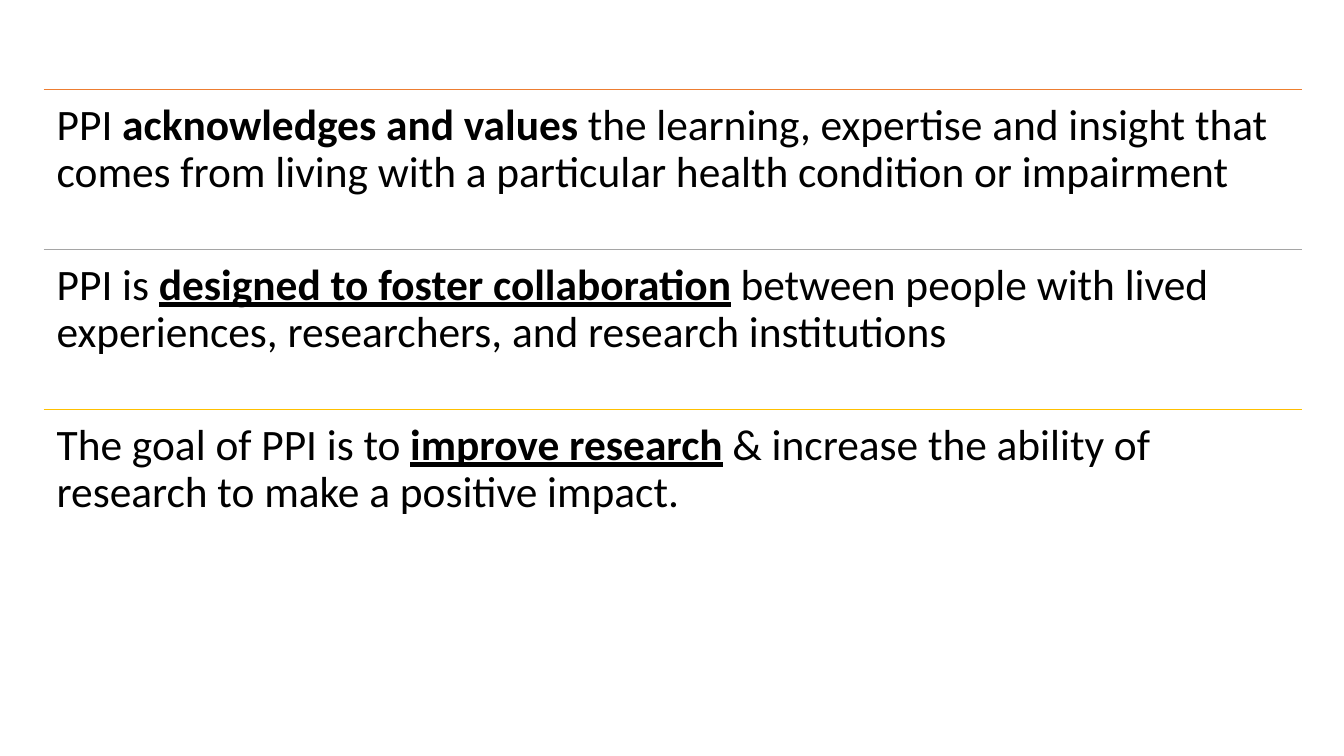
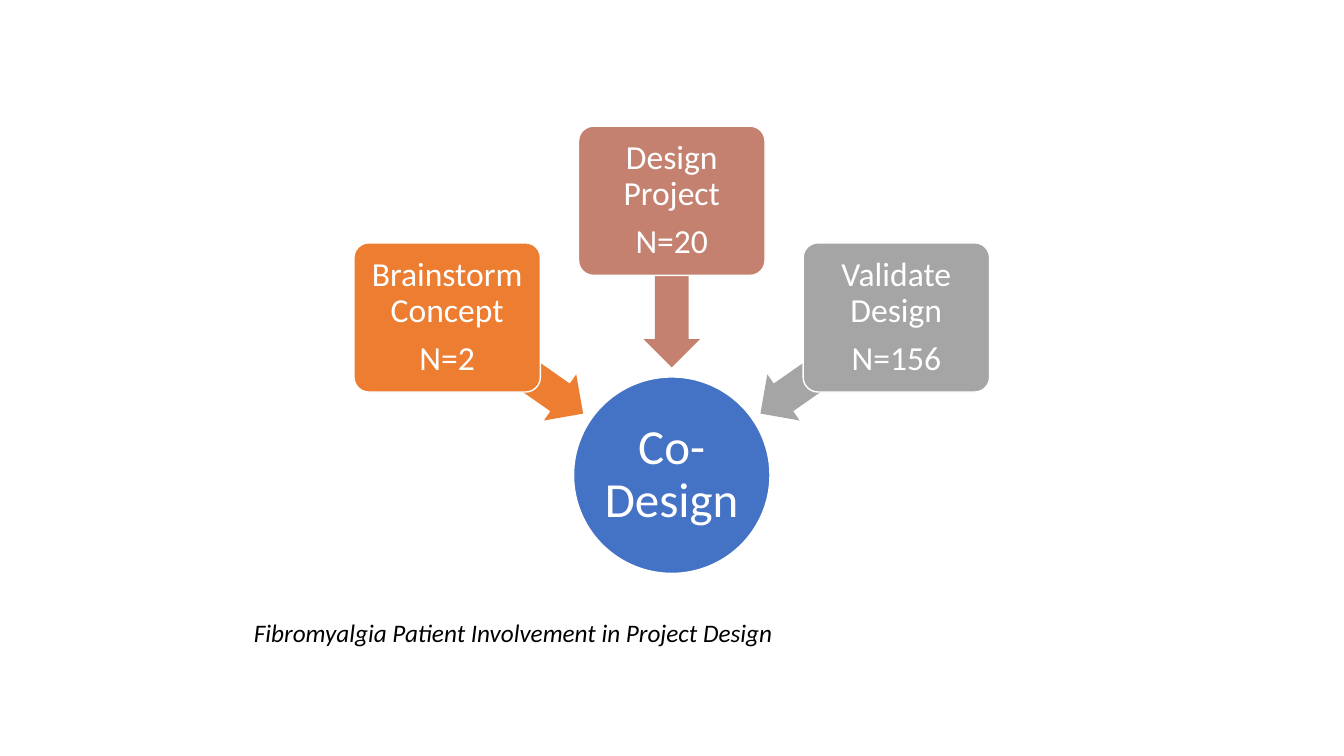
import pptx
import pptx.util
import pptx.dml.color
import pptx.enum.shapes
import pptx.enum.text
import lxml.etree

Cm = pptx.util.Cm
Pt = pptx.util.Pt
RGBColor = pptx.dml.color.RGBColor
Shape = pptx.enum.shapes.MSO_SHAPE
Align = pptx.enum.text.PP_ALIGN
Anchor = pptx.enum.text.MSO_ANCHOR

BLACK = RGBColor(0x00, 0x00, 0x00)
WHITE = RGBColor(0xFF, 0xFF, 0xFF)
BLUE = RGBColor(0x44, 0x72, 0xC4)
ORANGE = RGBColor(0xED, 0x7D, 0x31)
GREY = RGBColor(0xA5, 0xA5, 0xA5)
GOLD = RGBColor(0xFF, 0xC0, 0x00)
ROSE = RGBColor(0xC4, 0x81, 0x70)
FONT = "Calibri"


def style(para, size, color):
    para.font.name = FONT
    para.font.size = Pt(size)
    para.font.color.rgb = color


def block(slide, kind, box, fill, lines=(), size=24, inset=0.12):
    """Add a filled shape; one with text lines also gets a white outline."""
    shape = slide.shapes.add_shape(kind, *map(Cm, box))
    shape.shadow.inherit = False
    shape.fill.solid()
    shape.fill.fore_color.rgb = fill
    if not lines:
        shape.line.fill.background()
        return shape
    shape.line.color.rgb = WHITE
    shape.line.width = Pt(1)
    frame = shape.text_frame
    frame.word_wrap = True
    frame.vertical_anchor = Anchor.MIDDLE
    frame.margin_left = frame.margin_right = Cm(inset)
    frame.margin_top = frame.margin_bottom = Cm(inset)
    for i, line in enumerate(lines):
        para = frame.add_paragraph() if i else frame.paragraphs[0]
        para.text = line
        para.alignment = Align.CENTER
        para.line_spacing = 0.9
        if i:
            para.space_before = Pt(8.5)
        style(para, size, WHITE)
    return shape


deck = pptx.Presentation()
deck.slide_width = Cm(33.87)
deck.slide_height = Cm(19.05)
blank = deck.slide_layouts[6]

# Slide 1: three ruled statements
slide = deck.slides.add_slide(blank)
left, top, width, step = 1.1, 2.26, 31.7, 4.03
points = [
    (ORANGE, "PPI ", "acknowledges and values", False,
     " the learning, expertise and insight that comes from living with "
     "a particular health condition or impairment"),
    (GREY, "PPI is ", "designed to foster collaboration", True,
     " between people with lived experiences, researchers, "
     "and research institutions"),
    (GOLD, "The goal of PPI is to ", "improve research", True,
     " & increase the ability of research to make a positive impact."),
]
for i, (color, start, key, under, rest) in enumerate(points):
    y = Cm(top + i * step)
    rule = slide.shapes.add_connector(
        pptx.enum.shapes.MSO_CONNECTOR.STRAIGHT,
        Cm(left), y, Cm(left + width), y)
    rule.line.color.rgb = color
    rule.line.width = Pt(1)
    lxml.etree.SubElement(rule.line._get_or_add_ln().getparent(),
                          pptx.oxml.ns.qn("a:effectLst"))

    frame = slide.shapes.add_textbox(
        Cm(left), y, Cm(width), Cm(step)).text_frame
    frame.word_wrap = True
    frame.margin_left = frame.margin_right = Cm(0.33)
    frame.margin_top = frame.margin_bottom = Cm(0.33)
    para = frame.paragraphs[0]
    para.line_spacing = 0.9
    style(para, 31, BLACK)
    for text in (start, key, rest):
        run = para.add_run()
        run.text = text
        if text == key:
            run.font.bold = True
            run.font.underline = under

# Slide 2: three steps that lead to co-design
slide = deck.slides.add_slide(blank)
mid = 16.93
disc = 4.95
block(slide, Shape.OVAL, (mid - disc / 2, 9.5, disc, disc), BLUE,
      ["Co-Design"], size=35, inset=0.06)

wide, high = 4.7, 3.76
long, thick = 4.19, 1.42
# Side (-1 left, 0 middle, 1 right), box top, arrow centre, turn, colour, text
steps = [
    (-1, 6.12, 9.22, 215, ORANGE, ["Brainstorm Concept", "N=2"]),
    (0, 3.18, 7.16, 270, ROSE, ["Design Project", "N=20"]),
    (1, 6.12, 9.22, 325, GREY, ["Validate Design", "N=156"]),
]
for side, top, centre, turn, color, lines in steps:
    arrow = block(slide, Shape.LEFT_ARROW,
                  (mid + side * 3.95 - long / 2, centre - thick / 2,
                   long, thick), color)
    arrow.rotation = turn
    arrow.adjustments[0] = 0.6
    arrow.adjustments[1] = 0.5
    card = block(slide, Shape.ROUNDED_RECTANGLE,
                 (mid + side * 5.66 - wide / 2, top, wide, high),
                 color, lines)
    card.adjustments[0] = 0.1

frame = slide.shapes.add_textbox(
    Cm(6.15), Cm(15.44), Cm(21.16), Cm(1.02)).text_frame
frame.word_wrap = True
para = frame.paragraphs[0]
para.text = "Fibromyalgia Patient Involvement in Project Design"
style(para, 18, BLACK)
para.font.italic = True

deck.save("out.pptx")
